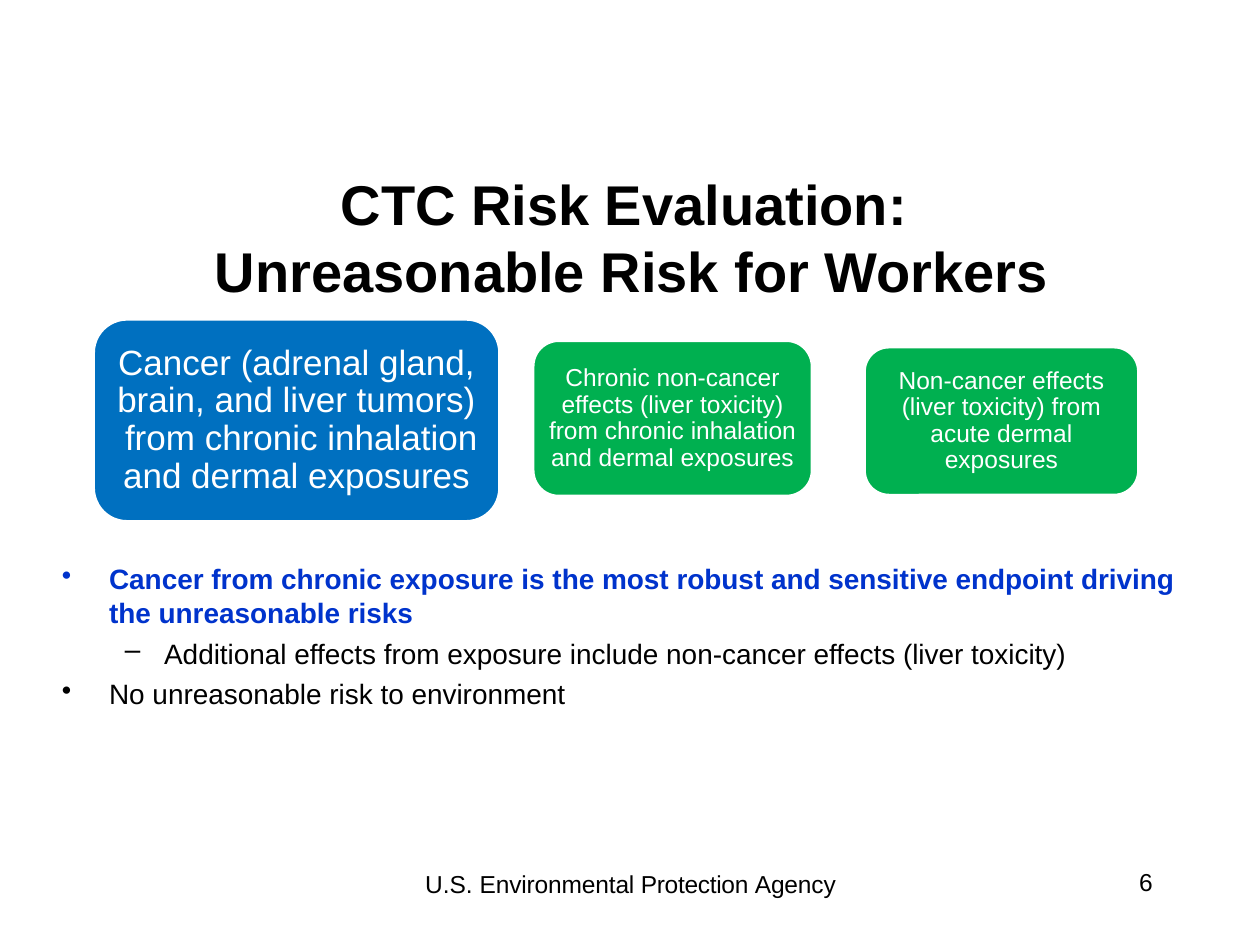
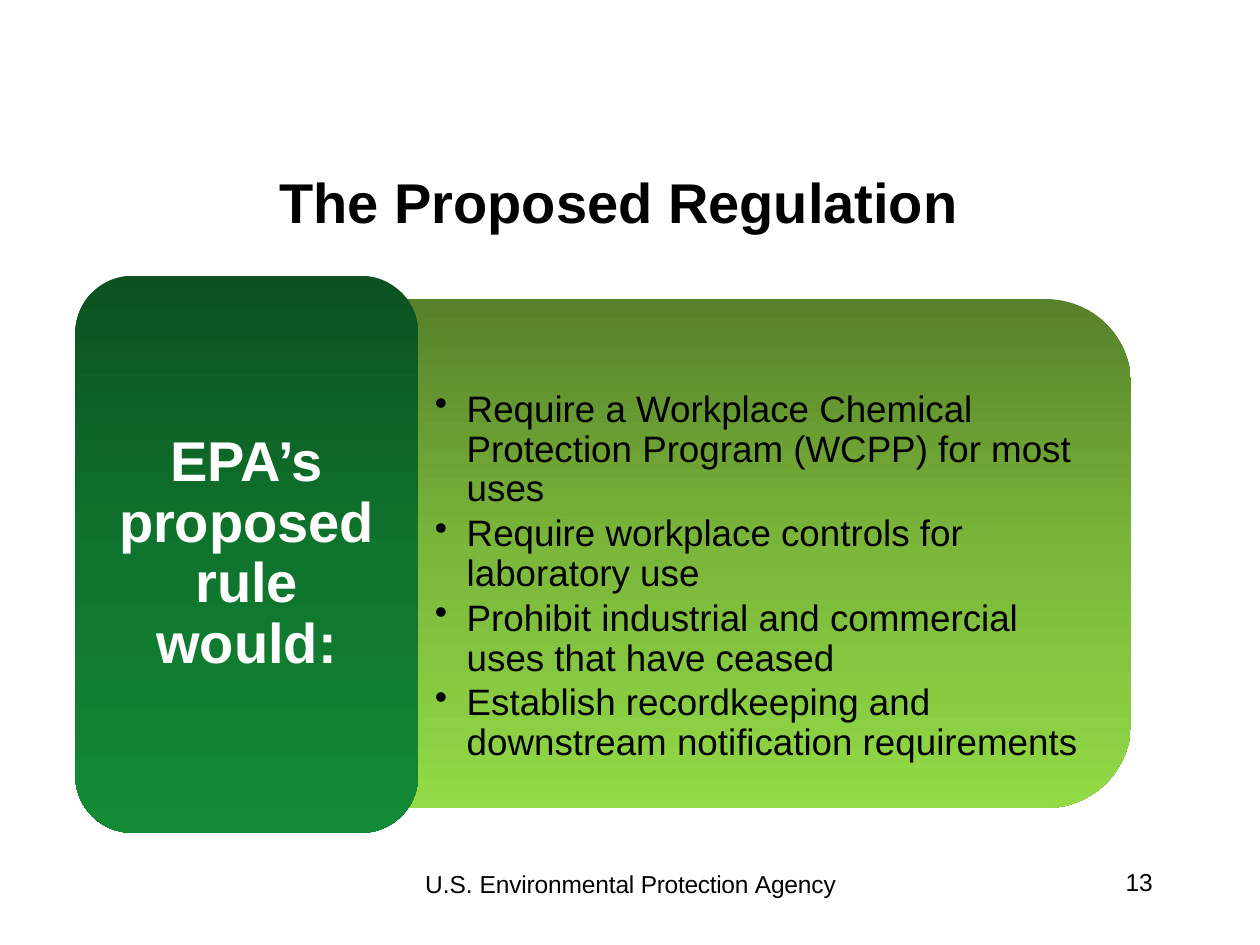
from pptx import Presentation
from pptx.dml.color import RGBColor
from pptx.enum.shapes import MSO_SHAPE as Preset
from pptx.enum.text import MSO_ANCHOR as Anchor, PP_ALIGN as Align
from pptx.oxml import parse_xml
from pptx.oxml.ns import nsdecls
from pptx.util import Cm, Pt

FONT = "Arial"
BLACK = RGBColor(0x00, 0x00, 0x00)
WHITE = RGBColor(0xFF, 0xFF, 0xFF)
ROYAL_BLUE = RGBColor(0x00, 0x33, 0xCC)
CARD_BLUE = RGBColor(0x00, 0x70, 0xC0)
CARD_GREEN = RGBColor(0x00, 0xB0, 0x50)
DARK_GREENS = (RGBColor(0x0B, 0x52, 0x20), RGBColor(0x0F, 0x74, 0x2D),
               RGBColor(0x12, 0x8A, 0x36))
LIGHT_GREENS = (RGBColor(0x57, 0x81, 0x2A), RGBColor(0x7B, 0xB7, 0x3B),
                RGBColor(0x92, 0xDA, 0x46))

FOOTER_BOX = (3.63, 17.35, 18.16, 1.27)
NUMBER_BOX = (18.21, 17.35, 5.28, 1.27)
FOOTER_SPANS = (("U.S. ", 0), ("Environmental", -10),
                (" Protection ", -20), ("Agency", -10))


# Shared helpers

def set_frame(shape, anchor=Anchor.TOP, inset=(0.25, 0.13)):
    frame = shape.text_frame
    frame.word_wrap = True
    frame.vertical_anchor = anchor
    frame.margin_left = frame.margin_right = Cm(inset[0])
    frame.margin_top = frame.margin_bottom = Cm(inset[1])
    return frame


def add_text_box(page, box, anchor=Anchor.TOP):
    return set_frame(page.shapes.add_textbox(*map(Cm, box)), anchor)


def next_para(frame):
    first = frame.paragraphs[0]
    return frame.add_paragraph() if first.runs else first


def add_span(para, text, size, color=BLACK, bold=False):
    span = para.add_run()
    span.text = text
    font = span.font
    font.name, font.size, font.bold = FONT, Pt(size), bold
    font.color.rgb = color
    return span


def add_bullet(para, mark, left, hang):
    properties = para._p.get_or_add_pPr()
    properties.set("marL", str(Cm(left)))
    properties.set("indent", str(-Cm(hang)))
    properties.append(parse_xml(f'<a:buChar {nsdecls("a")} char="{mark}"/>'))


def add_preset(page, preset, box):
    shape = page.shapes.add_shape(preset, *map(Cm, box))
    shape.shadow.inherit = False
    return shape


def fill_downward(shape, colors):
    """Three-stop gradient from top to bottom, whatever the shape's rotation."""
    stops = "".join(
        f'<a:gs pos="{index * 50000}"><a:srgbClr val="{color}"/></a:gs>'
        for index, color in enumerate(colors))
    gradient = parse_xml(
        f'<a:gradFill {nsdecls("a")} rotWithShape="0"><a:gsLst>{stops}</a:gsLst>'
        '<a:lin ang="5400000" scaled="0"/></a:gradFill>')
    shape._element.spPr.find(".//{*}prstGeom").addnext(gradient)
    shape.line.fill.background()


def add_label(shape, text, size, inset, bold=False):
    para = set_frame(shape, Anchor.MIDDLE, inset).paragraphs[0]
    para.alignment = Align.CENTER
    para.line_spacing = 0.9
    add_span(para, text, size, WHITE, bold)


def add_title(page, box, lines):
    para = add_text_box(page, box, Anchor.MIDDLE).paragraphs[0]
    para.alignment = Align.CENTER
    for index, line in enumerate(lines):
        if index:
            para.add_line_break()
        add_span(para, line, 32, bold=True)


def add_footer(page, number):
    para = add_text_box(page, FOOTER_BOX).paragraphs[0]
    para.alignment = Align.CENTER
    para.line_spacing = Pt(17.9)
    for text, spacing in FOOTER_SPANS:
        span = add_span(para, text, 14)
        if spacing:
            span.font._element.set("spc", str(spacing))
    para = add_text_box(page, NUMBER_BOX).paragraphs[0]
    para.alignment = Align.RIGHT
    add_span(para, str(number), 14)


# Risk slide

def add_risk_card(page, box, text, color, size, inset):
    card = add_preset(page, Preset.ROUNDED_RECTANGLE, box)
    card.fill.solid()
    card.fill.fore_color.rgb = color
    card.line.color.rgb = WHITE
    card.line.width = Pt(2)
    add_label(card, text, size, (inset, inset))


def add_findings(page, box):
    top_level, sub_level = ("•", 1.11, 0.95), ("–", 2.22, 0.79)
    findings = (
        ("Cancer from chronic exposure is the most robust and sensitive "
         "endpoint driving the unreasonable risks", top_level, ROYAL_BLUE, True),
        ("Additional effects from exposure include non-cancer effects "
         "(liver toxicity)", sub_level, BLACK, False),
        ("No unreasonable risk to environment", top_level, BLACK, False),
    )
    frame = add_text_box(page, box)
    for index, (text, bullet, color, bold) in enumerate(findings):
        para = next_para(frame)
        add_bullet(para, *bullet)
        para.space_before = Pt(4 if index else 0)
        add_span(para, text, 16, color, bold)


def build_risk_slide(page):
    add_title(page, (0.36, 3.4, 24.76, 2.74),
              ("CTC Risk Evaluation: ", "Unreasonable Risk for Workers"))
    add_risk_card(page, (1.88, 6.43, 8.2, 4.09),
                  "Cancer (adrenal gland, brain, and liver tumors)  from chronic "
                  "inhalation and dermal exposures", CARD_BLUE, 20, 0.2)
    add_risk_card(page, (10.74, 6.86, 5.64, 3.15),
                  "Chronic non-cancer effects (liver toxicity) from chronic "
                  "inhalation and dermal exposures", CARD_GREEN, 14, 0.15)
    add_risk_card(page, (17.42, 6.99, 5.54, 3),
                  "Non-cancer effects (liver toxicity) from acute dermal "
                  "exposures", CARD_GREEN, 14, 0.15)
    add_findings(page, (0.84, 11.2, 23.8, 5.31))
    add_footer(page, 6)


# Regulation slide

def add_requirements(page, box):
    left, top, width, height = box
    # A quarter turn puts the two rounded corners on the right
    shift = (width - height) / 2
    panel = add_preset(page, Preset.ROUND_2_SAME_RECTANGLE,
                       (left + shift, top - shift, height, width))
    panel.rotation = 90
    fill_downward(panel, LIGHT_GREENS)

    frame = add_text_box(page, (left, top + 0.98, width - 0.51, height - 1.01),
                         Anchor.MIDDLE)
    for text in (
        "Require a Workplace Chemical Protection Program (WCPP) for most uses",
        "Require workplace controls for laboratory use",
        "Prohibit industrial and commercial uses that have ceased",
        "Establish recordkeeping and downstream notification requirements",
    ):
        para = next_para(frame)
        add_bullet(para, "•", 1.27, 0.64)
        para.line_spacing = 0.9
        para.space_after = Pt(3)
        add_span(para, text, 21)


def add_lead_panel(page, box):
    panel = add_preset(page, Preset.ROUNDED_RECTANGLE, box)
    fill_downward(panel, DARK_GREENS)
    add_label(panel, "EPA’s proposed rule would:", 32, (0.33, 0.18), bold=True)


def build_regulation_slide(page):
    add_title(page, (1.9, 2.69, 21.16, 2.74), ("The Proposed Regulation",))
    add_requirements(page, (7.89, 6.03, 14.91, 10.26))
    add_lead_panel(page, (1.52, 5.56, 6.91, 11.23))
    add_footer(page, 13)


def main():
    deck = Presentation()
    deck.slide_width, deck.slide_height = Cm(25.4), Cm(19.05)
    for build in (build_risk_slide, build_regulation_slide):
        build(deck.slides.add_slide(deck.slide_layouts[6]))
    deck.save("out.pptx")


if __name__ == "__main__":
    main()
